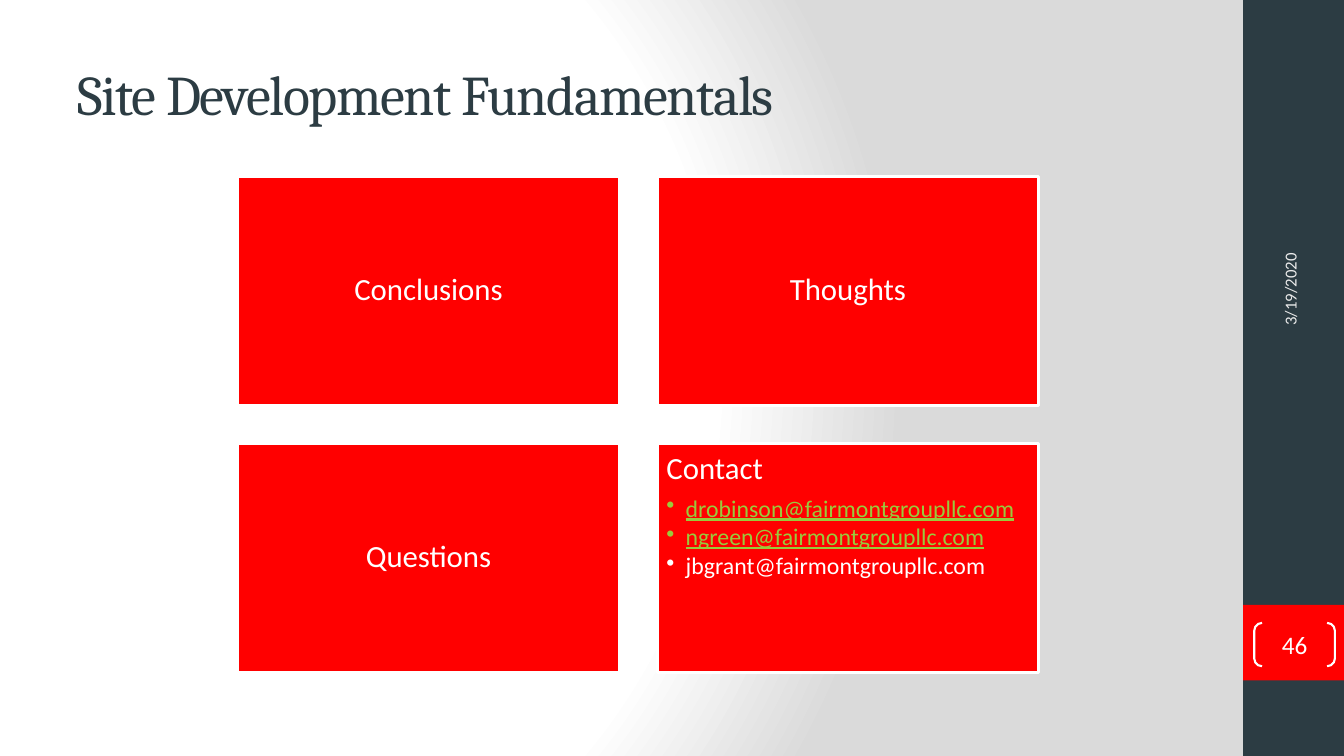
from dataclasses import dataclass

from pptx import Presentation
from pptx.dml.color import RGBColor
from pptx.enum.shapes import MSO_SHAPE as Shape
from pptx.enum.text import MSO_ANCHOR as Anchor, PP_ALIGN as Align
from pptx.oxml import parse_xml
from pptx.oxml.ns import nsdecls
from pptx.util import Inches, Pt


@dataclass(frozen=True)
class Theme:
    dark: str = "2C3C43"
    red: str = "FF0000"
    white: str = "FFFFFF"
    gray: str = "DADADA"
    pale: str = "EBEBEB"
    green: str = "99CA3C"
    heading: str = "Cambria"
    body: str = "Calibri"
    title_size: int = 40
    card_size: int = 22
    number_size: int = 18
    bullet_size: int = 17
    date_size: int = 12


class SlideBuilder:
    def __init__(self, page, theme):
        self.page = page
        self.theme = theme

    def background(self):
        """Fill the page with a circular gradient centred left of the middle."""
        stops = [(0, self.theme.white), (75, self.theme.white), (100, self.theme.gray)]
        stop_xml = "".join(
            f'<a:gs pos="{place * 1000}"><a:srgbClr val="{color}"/></a:gs>'
            for place, color in stops)
        self.page.element.cSld.insert(0, parse_xml(
            f'<p:bg {nsdecls("p", "a")}><p:bgPr><a:gradFill rotWithShape="1">'
            f'<a:gsLst>{stop_xml}</a:gsLst><a:path path="circle">'
            '<a:fillToRect l="20000" t="50000" r="100000" b="50000"/></a:path>'
            '</a:gradFill><a:effectLst/></p:bgPr></p:bg>'))

    def shape(self, kind, area, fill=None, line=None, weight=1):
        box = self.page.shapes.add_shape(kind, *map(Inches, area))
        box.shadow.inherit = False
        for part, color in ((box.fill, fill), (box.line.fill, line)):
            if color:
                part.solid()
                part.fore_color.rgb = RGBColor.from_string(color)
            else:
                part.background()
        if line:
            box.line.width = Pt(weight)
        return box

    def frame(self, box, anchor=Anchor.MIDDLE, inset=None):
        values = {"word_wrap": True, "vertical_anchor": anchor}
        if inset is not None:
            for side in ("left", "top", "right", "bottom"):
                values[f"margin_{side}"] = Inches(inset)
        for name, value in values.items():
            setattr(box.text_frame, name, value)

    def add_text(self, para, text, size, color, font=None, underline=None, **layout):
        for name, value in layout.items():
            setattr(para, name, value)
        span = para.add_run()
        span.text = text
        style = {"name": font or self.theme.body, "size": Pt(size), "underline": underline}
        for name, value in style.items():
            setattr(span.font, name, value)
        span.font.color.rgb = RGBColor.from_string(color)
        return span

    def label(self, area, text, size, color, font=None, rotation=0):
        box = self.page.shapes.add_textbox(*map(Inches, area))
        box.rotation = rotation
        self.frame(box)
        return self.add_text(box.text_frame.paragraphs[0], text, size, color, font)

    def bullet(self, para, text, color, underline):
        indent = Inches(0.19)
        properties = para._p.get_or_add_pPr()
        for name, value in {"marL": indent, "indent": -indent, "lvl": 1}.items():
            properties.set(name, str(int(value)))
        properties.append(parse_xml(f'<a:buChar {nsdecls("a")} char="•"/>'))
        self.add_text(para, text, self.theme.bullet_size, color, underline=underline,
                      alignment=Align.LEFT, line_spacing=0.9, space_after=Pt(2.1))

    def card(self, area, heading, contacts=()):
        theme = self.theme
        box = self.shape(Shape.RECTANGLE, area, theme.red, theme.white, 2)
        self.frame(box, Anchor.TOP if contacts else Anchor.MIDDLE, inset=0.09)
        self.add_text(box.text_frame.paragraphs[0], heading, theme.card_size, theme.white,
                      alignment=Align.LEFT if contacts else Align.CENTER,
                      line_spacing=0.9, space_after=Pt(7.7))
        for address, color, underline in contacts:
            self.bullet(box.text_frame.add_paragraph(), address, color, underline)

    def page_number(self, area, number):
        theme = self.theme
        box = self.shape(Shape.DOUBLE_BRACKET, area, line=theme.white, weight=1.5)
        box.adjustments[0] = 0.18
        self.frame(box, inset=0)
        self.add_text(box.text_frame.paragraphs[0], number, theme.number_size, theme.white,
                      alignment=Align.CENTER)


def main():
    deck = Presentation()
    deck.slide_width, deck.slide_height = Inches(13.33), Inches(7.5)
    theme = Theme()
    builder = SlideBuilder(deck.slides.add_slide(deck.slide_layouts[6]), theme)

    builder.background()
    builder.shape(Shape.RECTANGLE, (12.33, 0, 1, 7.5), theme.dark)
    builder.shape(Shape.RECTANGLE, (12.33, 6, 1, 0.75), theme.red)
    title = builder.label((0.67, 0.3, 11.11, 1.25), "Site Development Fundamentals",
                          theme.title_size, theme.dark, theme.heading)
    title._r.get_or_add_rPr().set("spc", "-100")

    contacts = [
        ("drobinson@fairmontgroupllc.com", theme.green, True),
        ("ngreen@fairmontgroupllc.com", theme.green, True),
        ("jbgrant@fairmontgroupllc.com", theme.white, False),
    ]
    cards = [("Conclusions", ()), ("Thoughts", ()), ("Questions", ()), ("Contact", contacts)]
    width, height, gap = 3.78, 2.27, 0.38
    for index, (heading, addresses) in enumerate(cards):
        row, column = divmod(index, 2)
        area = (2.36 + column * (width + gap), 1.75 + row * (height + gap), width, height)
        builder.card(area, heading, addresses)

    builder.label((11.46, 1.73, 2.67, 0.53), "3/19/2020", theme.date_size, theme.pale,
                  rotation=270)
    builder.page_number((12.44, 6.18, 0.8, 0.43), "46")
    deck.save("out.pptx")


if __name__ == "__main__":
    main()
